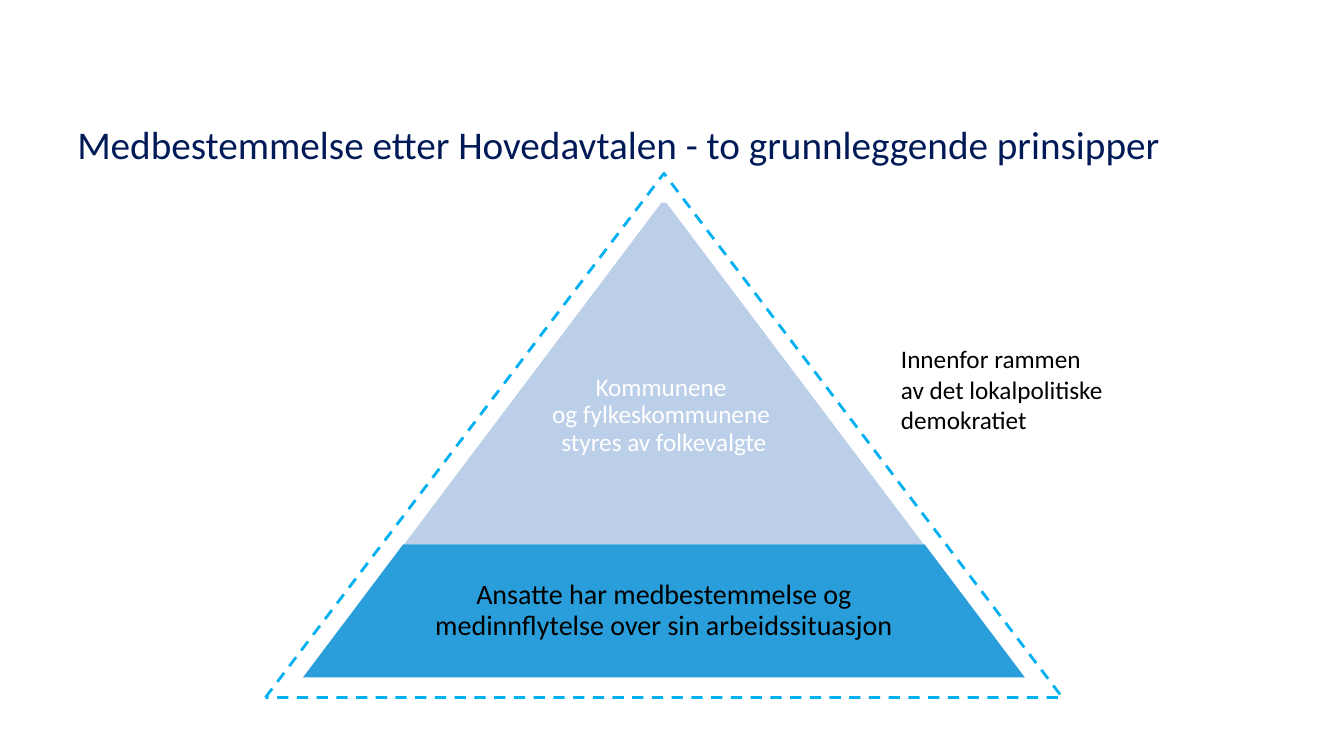
import dataclasses

import lxml.etree
import pptx
import pptx.dml.color
import pptx.enum.dml
import pptx.enum.shapes
import pptx.enum.text
import pptx.oxml.ns
import pptx.util

SHAPE = pptx.enum.shapes.MSO_SHAPE
ALIGN = pptx.enum.text.PP_ALIGN
ANCHOR = pptx.enum.text.MSO_ANCHOR


@dataclasses.dataclass(frozen=True)
class Theme:
    font: str = "Calibri"
    navy: str = "001A58"
    pale: str = "BCCFE8"
    blue: str = "008CD3"
    cyan: str = "00B0F0"
    white: str = "FFFFFF"
    black: str = "000000"
    title: int = 28
    large: int = 20
    body: int = 18


class Canvas:
    """Draws themed elements on one slide, placed in percent of its size."""

    def __init__(self, deck, theme):
        self.theme = theme
        self.width, self.height = deck.slide_width, deck.slide_height
        self.slide = deck.slides.add_slide(deck.slide_layouts[5])

    def place(self, left, top, width, height):
        return (round(left * self.width / 100), round(top * self.height / 100),
                round(width * self.width / 100), round(height * self.height / 100))

    def centred(self, centre, top, bottom, slope):
        width = 2 * slope * (bottom - top) * self.height / self.width
        return centre - width / 2, top, width, bottom - top

    def add_text(self, frame, paragraphs, size, color, align=ALIGN.LEFT, spacing=1.0):
        frame.word_wrap = True
        for index, lines in enumerate(paragraphs):
            paragraph = frame.add_paragraph() if index else frame.paragraphs[0]
            paragraph.alignment = align
            paragraph.line_spacing = spacing
            for number, line in enumerate(lines):
                if number:
                    paragraph.add_line_break()
                run = paragraph.add_run()
                run.text = line
                run.font.name = self.theme.font
                run.font.size = pptx.util.Pt(size)
                run.font.color.rgb = pptx.dml.color.RGBColor.from_string(color)

    def title(self, text, box):
        heading = self.slide.shapes.title
        heading.left, heading.top, heading.width, heading.height = self.place(*box)
        heading.text_frame.vertical_anchor = ANCHOR.MIDDLE
        self.add_text(heading.text_frame, [[text]], self.theme.title, self.theme.navy)

    def band(self, box, color, opacity=100):
        band = self.slide.shapes.add_shape(SHAPE.TRAPEZOID, *self.place(*box))
        band.adjustments[0] = 0.753
        band.shadow.inherit = False
        band.fill.solid()
        band.fill.fore_color.rgb = pptx.dml.color.RGBColor.from_string(color)
        band.line.fill.background()
        if opacity < 100:
            tint = band.element.spPr.find(".//" + pptx.oxml.ns.qn("a:srgbClr"))
            lxml.etree.SubElement(tint, pptx.oxml.ns.qn("a:alpha"), val=str(opacity * 1000))

    def label(self, lines, box, size, color):
        frame = self.slide.shapes.add_textbox(*self.place(*box)).text_frame
        frame.margin_left = frame.margin_right = pptx.util.Inches(0.03)
        frame.margin_top = frame.margin_bottom = pptx.util.Inches(0.03)
        frame.vertical_anchor = ANCHOR.MIDDLE
        self.add_text(frame, [lines], size, color, ALIGN.CENTER, 0.9)

    def note(self, paragraphs, box):
        frame = self.slide.shapes.add_textbox(*self.place(*box)).text_frame
        self.add_text(frame, paragraphs, self.theme.body, self.theme.black)
        frame.auto_size = pptx.enum.text.MSO_AUTO_SIZE.SHAPE_TO_FIT_TEXT

    def dashed_triangle(self, box):
        frame = self.slide.shapes.add_shape(SHAPE.ISOSCELES_TRIANGLE, *self.place(*box))
        frame.shadow.inherit = False
        frame.fill.background()
        frame.line.color.rgb = pptx.dml.color.RGBColor.from_string(self.theme.cyan)
        frame.line.width = pptx.util.Pt(2)
        frame.line.dash_style = pptx.enum.dml.MSO_LINE.DASH


def main():
    deck = pptx.Presentation()
    deck.slide_width = pptx.util.Inches(13.33)
    deck.slide_height = pptx.util.Inches(7.5)
    theme = Theme()
    canvas = Canvas(deck, theme)
    centre, slope = 49.4, 0.76
    apex, divide, base = 26.8, 72, 89.6

    canvas.title("Medbestemmelse etter Hovedavtalen - to grunnleggende prinsipper",
                 (5, 10.67, 90, 16.67))

    elected = canvas.centred(centre, apex, divide, slope)
    canvas.band(elected, theme.pale)
    canvas.label(["Kommunene ", "og fylkeskommunene ", "styres av folkevalgte"],
                 (elected[0], 38, elected[2], divide - 38), theme.body, theme.white)

    left, _, width, _ = canvas.centred(centre, apex, base, slope)
    canvas.band((left, divide, width, base - divide), theme.blue, 84)
    canvas.label(["Ansatte har medbestemmelse og medinnflytelse over sin arbeidssituasjon "],
                 (left + 0.175 * width, divide, 0.65 * width, base - divide),
                 theme.large, theme.black)

    canvas.note([["Innenfor rammen"], ["av det lokalpolitiske demokratiet"]],
                (66.3, 44.8, 22.5, 13.47))
    canvas.dashed_triangle(canvas.centred(centre, 22.93, 92.27, slope))
    deck.save("out.pptx")


if __name__ == "__main__":
    main()
